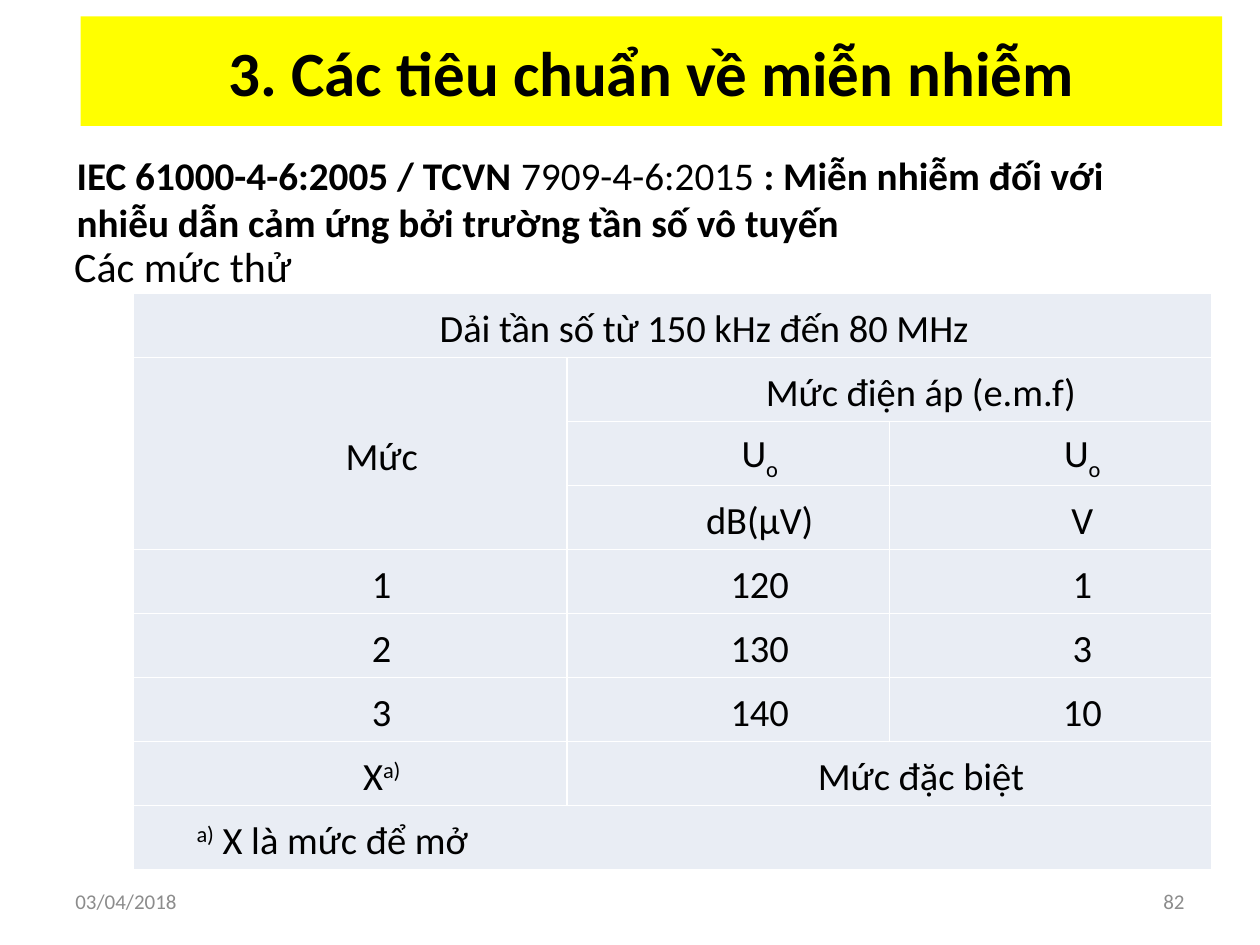
from lxml import etree
from pptx import Presentation, util as u
from pptx.dml.color import RGBColor as Rgb
from pptx.enum import shapes, text
from pptx.oxml import ns

deck = Presentation()
deck.slide_width, deck.slide_height = u.Inches(10), u.Inches(7.5)
page = deck.slides.add_slide(deck.slide_layouts[6])
unit = deck.slide_width / 100
mid, left, right = text.PP_ALIGN.CENTER, text.PP_ALIGN.LEFT, text.PP_ALIGN.RIGHT


def grid(*cols):
    return [round(c * unit) for c in cols]


def write(frame, runs, size, tint="000000", side=left, gap=0):
    frame.word_wrap = True
    para = frame.paragraphs[0]
    para.alignment = side
    para.space_before = u.Pt(gap)
    for words, bold, base in runs:
        run = para.add_run()
        run.text = words
        font = run.font
        font.name, font.size, font.bold = "Calibri", u.Pt(size), bold
        font.color.rgb = Rgb.from_string(tint)
        if base:
            run._r.get_or_add_rPr().set("baseline", str(base * 1000))
    return para


title = page.shapes.add_shape(shapes.MSO_SHAPE.RECTANGLE, *grid(6.4, 1.3, 9.06 * 10, 8.7))
title.shadow.inherit = False
title.fill.solid()
title.fill.fore_color.rgb = Rgb.from_string("FFFF00")
title.line.fill.background()
title.text_frame.vertical_anchor = text.MSO_ANCHOR.MIDDLE
write(title.text_frame, [("3. Các tiêu chuẩn về miễn nhiễm", True, 0)], 36, side=mid)

top, center = text.MSO_ANCHOR.TOP, text.MSO_ANCHOR.MIDDLE
intro = [
    ("IEC 61000-4-6:2005 / TCVN ", True, 0),
    ("7909-4-6:2015 ", False, 0),
    (": Miễn nhiễm đối với nhiễu dẫn cảm ứng bởi trường tần số vô tuyến", True, 0),
]
notes = [
    ((5.1, 11.5, 91.5, 8.7), intro, 22.4, "000000", left, 4.5, top),
    ((4.9, 18.6, 91.5, 6.6), [("Các mức thử", False, 0)], 24, "000000", left, 4.8, top),
    ((5, 69.5, 23.3, 4), [("03/04/2018", False, 0)], 12, "8C8C8C", left, 0, center),
    ((71.7, 69.5, 23.3, 4), [("82", False, 0)], 12, "8C8C8C", right, 0, center),
]
for spot, runs, size, tint, side, gap, hold in notes:
    frame = page.shapes.add_textbox(*grid(*spot)).text_frame
    frame.vertical_anchor = hold
    write(frame, runs, size, tint, side, gap)

volt = [("U", 0), ("o", -25)]
rows = [
    ["Dải tần số từ 150 kHz đến 80 MHz", "", ""],
    ["Mức", "Mức điện áp (e.m.f)", ""],
    ["", volt, volt],
    ["", "dB(μV)", "V"],
    ["1", "120", "1"],
    ["2", "130", "3"],
    ["3", "140", "10"],
    [[("X", 0), ("a)", 30)], "Mức đặc biệt", ""],
    [[("a)", 30), (" X là mức để mở", 0)], "", ""],
]
last = len(rows) - 1
table = page.shapes.add_table(len(rows), 3, *grid(10.6, 23.3, 85.7, 45.7)).table
table.first_row = table.horz_banding = False
for col, wide in zip(table.columns, grid(34.4, 25.6, 25.6)):
    col.width = wide
for row in table.rows:
    row.height = grid(5.08)[0]
for r, c, end, stop in [(0, 0, 0, 2), (1, 0, 3, 0), (1, 1, 1, 2), (7, 1, 7, 2), (last, 0, last, 2)]:
    table.cell(r, c).merge(table.cell(end, stop))

for r, row in enumerate(rows):
    for c, item in enumerate(row):
        cell = table.cell(r, c)
        cell.margin_left = cell.margin_right = cell.margin_top = cell.margin_bottom = 0
        cell.vertical_anchor = center
        prop = cell._tc.get_or_add_tcPr()
        for edge in ("lnL", "lnR", "lnT", "lnB"):
            line = etree.SubElement(prop, ns.qn("a:" + edge), w=str(u.Pt(1)))
            fill = etree.SubElement(line, ns.qn("a:solidFill"))
            etree.SubElement(fill, ns.qn("a:srgbClr"), val="FFFFFF")
        cell.fill.solid()
        cell.fill.fore_color.rgb = Rgb.from_string("E9EDF4")
        if item:
            parts = [(item, 0)] if isinstance(item, str) else item
            runs = [(words, False, base) for words, base in parts]
            para = write(cell.text_frame, runs, 22, side=left if r == last else mid, gap=6)
            para.line_spacing = 1.15
            para._p.get_or_add_pPr().set("indent", str(u.Inches(0.5)))

deck.save("out.pptx")
